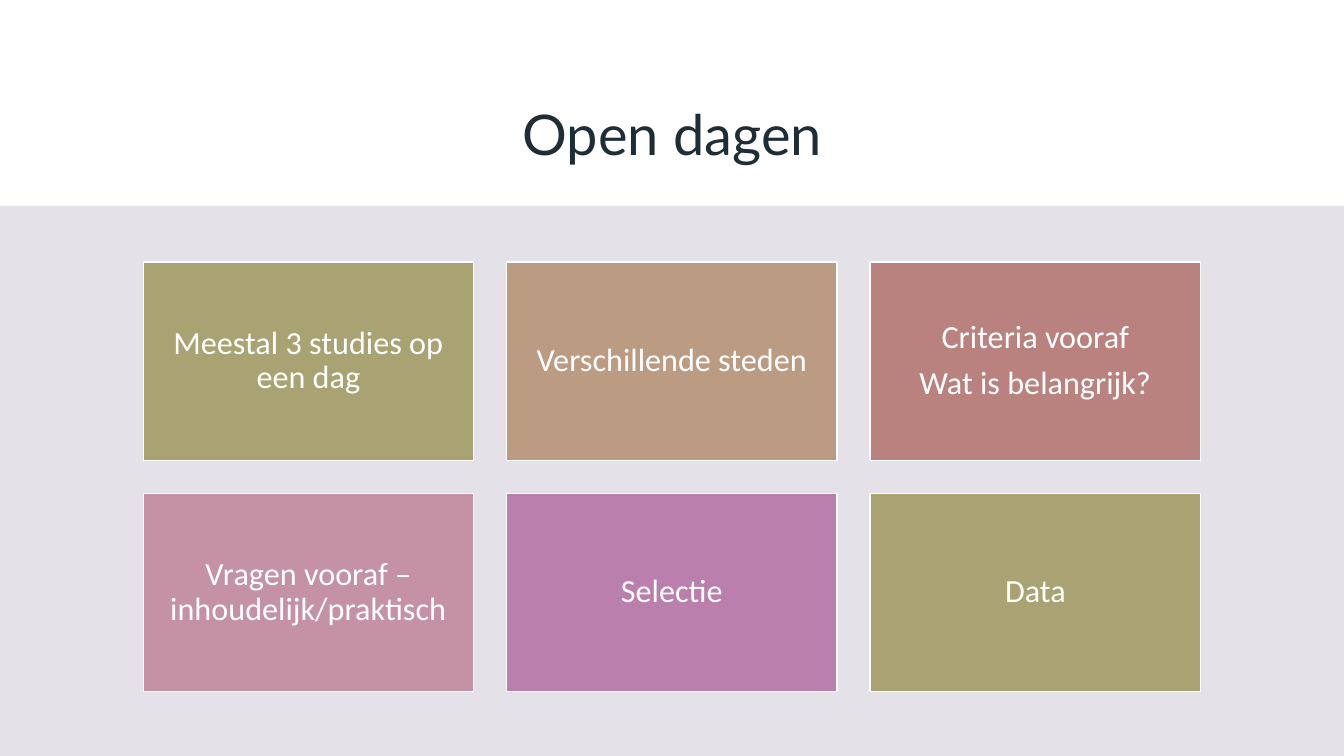
import dataclasses

import pptx
import pptx.dml.color
import pptx.enum.shapes
import pptx.enum.text
import pptx.util

Cm = pptx.util.Cm
Pt = pptx.util.Pt
Align = pptx.enum.text.PP_ALIGN
Anchor = pptx.enum.text.MSO_ANCHOR
RECTANGLE = pptx.enum.shapes.MSO_SHAPE.RECTANGLE


@dataclasses.dataclass(frozen=True)
class Theme:
    paper: str = "FFFFFF"
    band: str = "E4E2E8"
    title_ink: str = "1F2D37"
    card_ink: str = "FFFFFF"
    accents: tuple = ("A9A273", "BB9B81", "BA827F", "C492A4", "BA7FAD")
    title_font: str = "Lato"
    card_font: str = "Calibri"
    title_size: int = 40
    card_size: int = 23


@dataclasses.dataclass(frozen=True)
class Box:
    left: int
    top: int
    width: int
    height: int


THEME = Theme()
PAGE_WIDTH, PAGE_HEIGHT = Cm(33.87), Cm(19.05)
COLUMNS, ROWS = 3, 2
CARDS = [
    ["Meestal 3 studies op een dag"],
    ["Verschillende steden"],
    ["Criteria vooraf", "Wat is belangrijk?"],
    ["Vragen vooraf – inhoudelijk/praktisch"],
    ["Selectie"],
    ["Data"],
]


def apply(target, values):
    for name, value in values.items():
        setattr(target, name, value)


def paint(fill, colour):
    fill.solid()
    fill.fore_color.rgb = pptx.dml.color.RGBColor.from_string(colour)


def write(frame, lines, font, size, colour, para_format):
    """Fill a text frame with one paragraph per line."""
    for index, line in enumerate(lines):
        para = frame.paragraphs[0] if index == 0 else frame.add_paragraph()
        apply(para, para_format)
        span = para.add_run()
        span.text = line
        apply(span.font, {"name": font, "size": Pt(size)})
        span.font.color.rgb = pptx.dml.color.RGBColor.from_string(colour)


def add_rectangle(page, box, colour):
    shape = page.shapes.add_shape(RECTANGLE, box.left, box.top, box.width, box.height)
    shape.shadow.inherit = False
    paint(shape.fill, colour)
    return shape


def add_title(page, box, text):
    title = page.shapes.title
    apply(title, {"left": box.left, "top": box.top,
                  "width": box.width, "height": box.height})
    apply(title.text_frame, {
        "word_wrap": True,
        "auto_size": pptx.enum.text.MSO_AUTO_SIZE.NONE,
        "vertical_anchor": Anchor.MIDDLE,
    })
    write(title.text_frame, [text], THEME.title_font, THEME.title_size,
          THEME.title_ink, {"alignment": Align.CENTER})


def add_band(page, box):
    band = add_rectangle(page, box, THEME.band)
    band.line.fill.background()


def add_card(page, box, lines, colour):
    card = add_rectangle(page, box, colour)
    paint(card.line.fill, THEME.paper)
    card.line.width = Pt(1)
    inset = Cm(0.25)
    apply(card.text_frame, {
        "word_wrap": True,
        "vertical_anchor": Anchor.MIDDLE,
        "margin_left": inset,
        "margin_top": inset,
        "margin_right": inset,
        "margin_bottom": inset,
    })
    write(card.text_frame, lines, THEME.card_font, THEME.card_size, THEME.card_ink,
          {"alignment": Align.CENTER, "line_spacing": 0.9, "space_after": Pt(8)})


def add_card_grid(page, box, cards):
    gap = Cm(0.83)
    width = (box.width - gap * (COLUMNS - 1)) // COLUMNS
    height = (box.height - gap * (ROWS - 1)) // ROWS
    for index, lines in enumerate(cards):
        row, column = divmod(index, COLUMNS)
        card_box = Box(box.left + column * (width + gap),
                       box.top + row * (height + gap), width, height)
        add_card(page, card_box, lines, THEME.accents[index % len(THEME.accents)])


def main():
    deck = pptx.Presentation()
    apply(deck, {"slide_width": PAGE_WIDTH, "slide_height": PAGE_HEIGHT})
    page = deck.slides.add_slide(deck.slide_layouts.get_by_name("Title Only"))
    paint(page.background.fill, THEME.paper)

    # Heading
    add_title(page, Box(Cm(3.96), Cm(1.96), Cm(25.96), Cm(2.77)), "Open dagen")

    # Tinted band below the heading
    band_top = Cm(5.18)
    add_band(page, Box(0, band_top, PAGE_WIDTH, PAGE_HEIGHT - band_top))

    # Topic cards
    add_card_grid(page, Box(Cm(3.61), Cm(6.6), Cm(26.65), Cm(10.83)), CARDS)

    deck.save("out.pptx")


if __name__ == "__main__":
    main()
